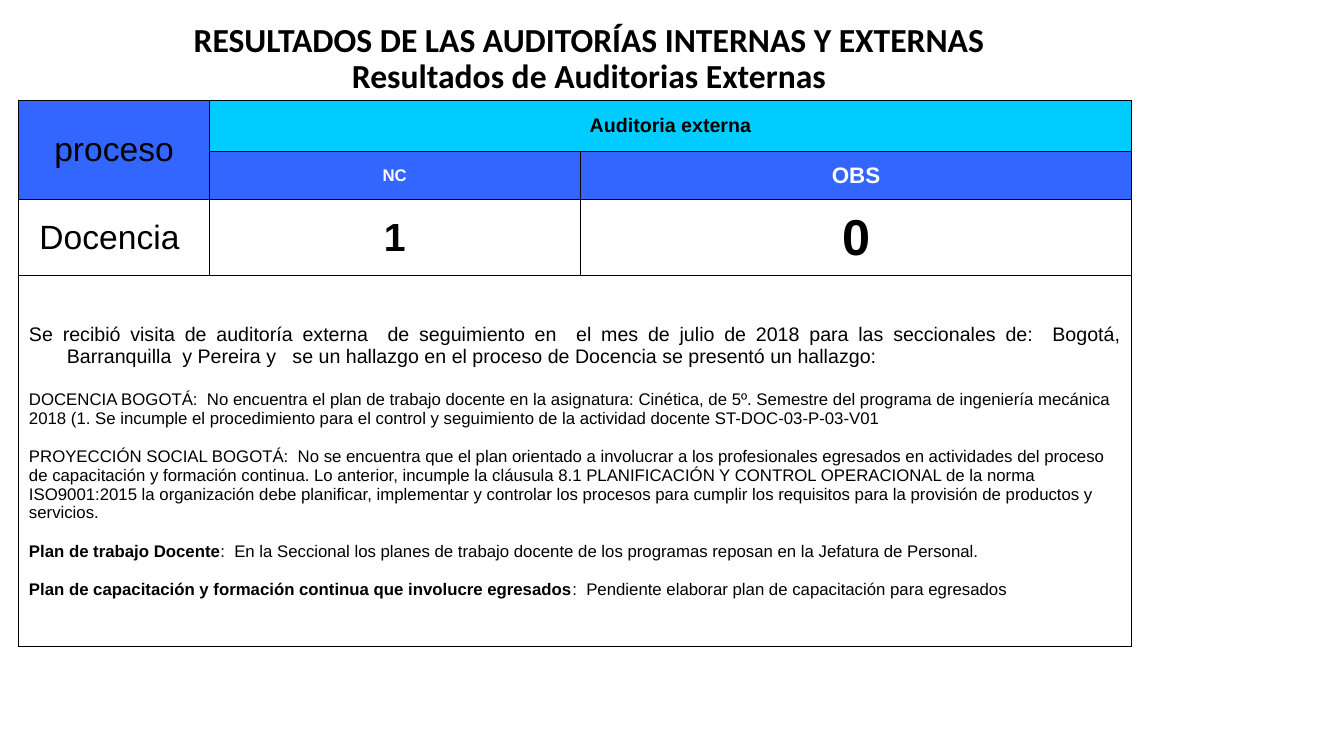
from pptx import Presentation
from pptx import util as u
from pptx.dml.color import RGBColor
from pptx.enum import text as t
from pptx.oxml import parse_xml
from pptx.oxml.ns import nsdecls

BLACK = RGBColor(0x00, 0x00, 0x00)
WHITE = RGBColor(0xFF, 0xFF, 0xFF)
BLUE = RGBColor(0x33, 0x66, 0xFF)
CYAN = RGBColor(0x00, 0xCC, 0xFF)
MID = t.PP_ALIGN.CENTER
JUST = t.PP_ALIGN.JUSTIFY


class Deck:
    def __init__(self, wide, high):
        self.prs = Presentation()
        self.prs.slide_width = u.Pt(wide)
        self.prs.slide_height = u.Pt(high)
        self.slide = self.prs.slides.add_slide(self.prs.slide_layouts[5])

    def run(self, para, words, size, bold=False, color=BLACK, face="Arial"):
        run = para.add_run()
        run.text = words
        font = run.font
        font.size, font.bold, font.name = u.Pt(size), bold, face
        font.color.rgb = color

    def title(self, box, lines, size):
        shape = self.slide.shapes.title
        shape.left, shape.top, shape.width, shape.height = map(u.Pt, box)
        frame = shape.text_frame
        frame.auto_size = t.MSO_AUTO_SIZE.NONE
        frame.vertical_anchor = t.MSO_ANCHOR.BOTTOM
        para = frame.paragraphs[0]
        para.alignment, para.line_spacing = MID, 0.9
        for i, line in enumerate(lines):
            if i:
                para.add_line_break()
            self.run(para, line, size, True, face="Calibri")

    def table(self, left, top, cols, rows):
        table = self.slide.shapes.add_table(
            len(rows), len(cols), u.Pt(left), u.Pt(top),
            u.Pt(sum(cols)), u.Pt(sum(rows))).table
        table.first_row = table.horz_banding = False
        for col, wide in zip(table.columns, cols):
            col.width = u.Pt(wide)
        for row, high in zip(table.rows, rows):
            row.height = u.Pt(high)
        for cell in table.iter_cells():
            self.border(cell)
            cell.fill.background()
        return table

    def border(self, cell):
        props = cell._tc.get_or_add_tcPr()
        for side in "LRTB":
            props.append(parse_xml(
                f'<a:ln{side} {nsdecls("a")} w="{u.Pt(1)}"><a:solidFill>'
                f'<a:srgbClr val="{BLACK}"/></a:solidFill></a:ln{side}>'))

    def cell(self, cell, paras, align=MID, fill=None):
        """Each para is (space before, list of run arguments)."""
        cell.vertical_anchor = t.MSO_ANCHOR.MIDDLE
        if fill is not None:
            cell.fill.solid()
            cell.fill.fore_color.rgb = fill
        for i, (gap, runs) in enumerate(paras):
            frame = cell.text_frame
            para = frame.add_paragraph() if i else frame.paragraphs[0]
            para.alignment = align
            props = para._p.get_or_add_pPr()
            props.set("marL", str(u.Pt(27)))
            props.set("indent", str(u.Pt(-27)))
            if gap:
                para.space_before = u.Pt(gap)
            for args in runs:
                self.run(para, *args)


def main():
    deck = Deck(960, 540)

    # Title
    deck.title((42.5, -18, 756.5, 90),
               ["RESULTADOS DE LAS AUDITORÍAS INTERNAS Y EXTERNAS",
                "Resultados de Auditorias Externas"], 24)

    # Grid
    grid = deck.table(13.5, 72, [136, 265, 394], [36, 34.5, 54.5, 265])
    for start, end in [((0, 0), (1, 0)), ((0, 1), (0, 2)), ((3, 0), (3, 2))]:
        grid.cell(*start).merge(grid.cell(*end))

    # Heads and counts
    heads = [
        (0, 0, BLUE, ("proceso", 24)),
        (0, 1, CYAN, ("Auditoria externa", 14, True)),
        (1, 1, BLUE, ("NC", 12, True, WHITE)),
        (1, 2, BLUE, ("OBS", 16, True, WHITE)),
        (2, 0, None, ("Docencia ", 24)),
        (2, 1, None, ("1", 28, True)),
        (2, 2, None, ("0", 36, True)),
    ]
    for row, col, fill, args in heads:
        deck.cell(grid.cell(row, col), [(0, [args])], fill=fill)

    # Findings
    notes = [
        (0, [("Se recibió visita de auditoría externa  de seguimiento en  el mes de julio de 2018 "
              "para las seccionales de:  Bogotá, Barranquilla  y Pereira y   se un hallazgo en el "
              "proceso de Docencia se presentó un hallazgo: ", 14)]),
        (16, [("DOCENCIA BOGOTÁ:  No encuentra el plan de trabajo docente en la asignatura: "
               "Cinética, de 5º. Semestre del programa de ingeniería mecánica", 12)]),
        (0, [("2018 (1. Se incumple el procedimiento para el control y seguimiento de la "
              "actividad docente ST-DOC-03-P-03-V01", 12)]),
        (13.8, [("PROYECCIÓN SOCIAL BOGOTÁ:  No se encuentra que el plan orientado a involucrar "
                 "a los profesionales egresados en actividades del proceso", 12)]),
        (0, [("de capacitación y formación continua. Lo anterior, incumple la cláusula 8.1 "
              "PLANIFICACIÓN Y CONTROL OPERACIONAL de la norma", 12)]),
        (0, [("ISO9001:2015 la organización debe planificar, implementar y controlar los procesos "
              "para cumplir los requisitos para la provisión de productos y", 12)]),
        (0, [("servicios.", 12)]),
        (13.8, [("Plan de trabajo Docente", 12, True),
                (":  En la Seccional los planes de trabajo docente de los programas reposan "
                 "en la Jefatura de Personal.", 12)]),
        (13.8, [("Plan de capacitación y formación continua que involucre egresados", 12, True),
                (":  Pendiente elaborar plan de capacitación para egresados", 12)]),
    ]
    deck.cell(grid.cell(3, 0), notes, JUST)

    deck.prs.save("out.pptx")


if __name__ == "__main__":
    main()
